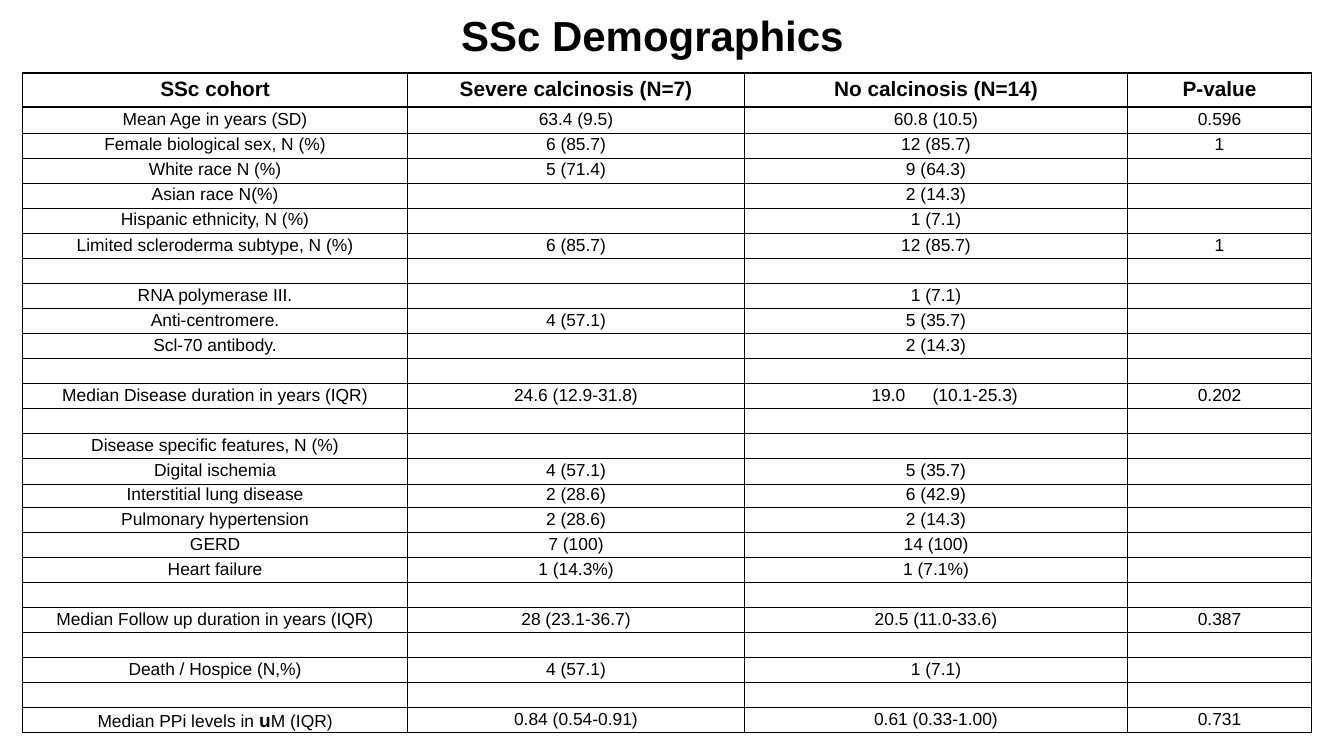
from lxml import etree
from pptx import Presentation
from pptx.dml.color import RGBColor
from pptx.enum import text as t
from pptx.oxml import ns
from pptx.util import Inches, Pt

BLACK = RGBColor(0, 0, 0)
WHITE = RGBColor(255, 255, 255)
FONT = "Arial"
BODY, HEAD, UNIT = 20.5, 24.5, 22.5

COLS = [6.3, 5.51, 6.27, 3.01]
ROWS = [
    ("SSc cohort", "Severe calcinosis (N=7)", "No calcinosis (N=14)", "P-value"),
    ("Mean Age in years (SD)", "63.4 (9.5)", "60.8 (10.5)", "0.596"),
    ("Female biological sex, N (%)", "6 (85.7)", "12 (85.7)", "1"),
    ("White race N (%)", "5 (71.4)", "9 (64.3)", ""),
    ("Asian race N(%)", "", "2 (14.3)", ""),
    ("Hispanic ethnicity, N (%)", "", "1 (7.1)", ""),
    ("Limited scleroderma subtype, N (%)", "6 (85.7)", "12 (85.7)", "1"),
    (),
    ("RNA polymerase III.", "", "1 (7.1)", ""),
    ("Anti-centromere.", "4 (57.1)", "5 (35.7)", ""),
    ("Scl-70 antibody.", "", "2 (14.3)", ""),
    (),
    ("Median Disease duration in years (IQR)", "24.6 (12.9-31.8)",
     "19.0\t(10.1-25.3)", "0.202"),
    (),
    ("Disease specific features, N (%)", "", "", ""),
    ("Digital ischemia", "4 (57.1)", "5 (35.7)", ""),
    ("Interstitial lung disease", "2 (28.6)", "6 (42.9)", ""),
    ("Pulmonary hypertension", "2 (28.6)", "2 (14.3)", ""),
    ("GERD", "7 (100)", "14 (100)", ""),
    ("Heart failure", "1 (14.3%)", "1 (7.1%)", ""),
    (),
    ("Median Follow up duration in years (IQR)", "28 (23.1-36.7)",
     "20.5 (11.0-33.6)", "0.387"),
    (),
    ("Death / Hospice (N,%)", "4 (57.1)", "1 (7.1)", ""),
    (),
    ("Median PPi levels in *u*M (IQR)", "0.84 (0.54-0.91)",
     "0.61 (0.33-1.00)", "0.731"),
]
TIGHT = 16  # the one lower row
HIGH = {0: 0.56, 1: 0.43, TIGHT: 0.38}


def write(frame, words, size=BODY, bold=False, before=2.4, lead=None):
    """Fill a frame; words between asterisks are bold and larger."""
    para = frame.paragraphs[0]
    para.alignment = t.PP_ALIGN.CENTER
    para.space_before = Pt(before)
    if lead:
        para.line_spacing = Pt(lead)
    for i, part in enumerate(words.split("*")):
        run = para.add_run()
        run.text = part
        font = run.font
        font.name = FONT
        font.size = Pt(UNIT if i % 2 else size)
        font.bold = bold or i % 2 == 1
        font.color.rgb = BLACK
    return para


def set_tab(para, left, stop):
    """Indent a left-aligned paragraph and give it one tab stop."""
    para.alignment = t.PP_ALIGN.LEFT
    props = para._p.get_or_add_pPr()
    props.set("marL", str(Inches(left)))
    props.set("indent", "0")
    tabs = etree.SubElement(props, ns.qn("a:tabLst"))
    etree.SubElement(tabs, ns.qn("a:tab"), pos=str(Inches(stop)), algn="l")


def set_edges(cell, top, bottom):
    """Draw the four borders, ahead of the fill."""
    props = cell._tc.get_or_add_tcPr()
    widths = {"lnL": 1, "lnR": 1, "lnT": top, "lnB": bottom}
    for i, (side, width) in enumerate(widths.items()):
        line = etree.Element(ns.qn("a:" + side), w=str(Pt(width)))
        fill = etree.SubElement(line, ns.qn("a:solidFill"))
        etree.SubElement(fill, ns.qn("a:srgbClr"), val=str(BLACK))
        props.insert(i, line)


def style(row):
    """Top inset and text format of a table row."""
    if row == 0:
        return 0.08, dict(size=HEAD, bold=True, before=5.5)
    if row == 1:
        return 0.04, dict(before=3)
    if row == TIGHT:
        return 0.02, dict(before=1.3)
    return (0.03 if row < TIGHT else 0.04), {}


def add_grid(slide):
    shape = slide.shapes.add_table(len(ROWS), len(COLS), Inches(0.37), Inches(1.19),
                                   Inches(sum(COLS)), Inches(10.81))
    grid = shape.table
    grid.first_row = grid.horz_banding = False
    for col, width in zip(grid.columns, COLS):
        col.width = Inches(width)
    for r, words in enumerate(ROWS):
        grid.rows[r].height = Inches(HIGH.get(r, 0.41))
        inset, form = style(r)
        for c in range(len(COLS)):
            cell = grid.cell(r, c)
            cell.fill.solid()
            cell.fill.fore_color.rgb = WHITE
            set_edges(cell, 3 if r < 2 else 1, 3 if r == 0 else 1)
            cell.margin_left = cell.margin_right = cell.margin_bottom = 0
            cell.margin_top = Inches(inset)
            if not words or not words[c]:
                continue
            if "*" in words[c]:
                cell.margin_top = Inches(0.02)
                write(cell.text_frame, words[c], before=1.6, lead=26.9)
                continue
            para = write(cell.text_frame, words[c], **form)
            if "\t" in words[c]:
                set_tab(para, 2.08, 2.8)


def add_title(slide, words):
    box = slide.shapes.add_textbox(Inches(7.53), Inches(0.14), Inches(6.29), Inches(0.85))
    frame = box.text_frame
    frame.word_wrap = False
    frame.margin_left = frame.margin_right = frame.margin_bottom = 0
    frame.margin_top = Inches(0.01)
    write(frame, words, size=49.5, bold=True, before=0.9)


def main():
    deck = Presentation()
    deck.slide_width, deck.slide_height = Inches(21.99), Inches(12.37)
    slide = deck.slides.add_slide(deck.slide_layouts[6])
    # Demographics table, then the heading above it
    add_grid(slide)
    add_title(slide, "SSc Demographics")
    deck.save("out.pptx")


if __name__ == "__main__":
    main()
